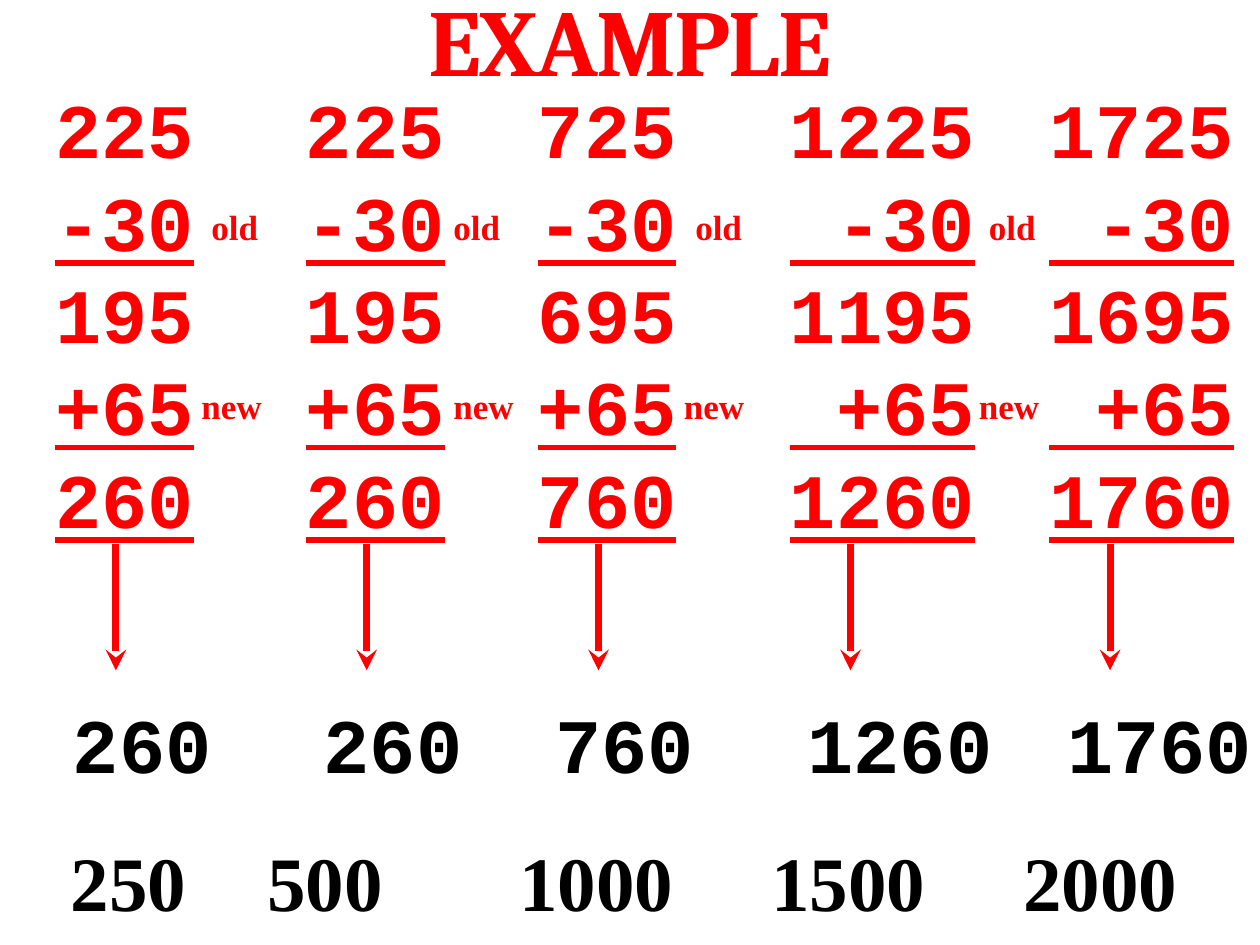
from lxml import etree
from pptx import Presentation, util as u
from pptx.dml.color import RGBColor
from pptx.enum import shapes, text
from pptx.oxml.ns import qn

# Content: old balance, old weight, new balance, new weight, result, limit
sums = [
    ("225", "-30", "195", "+65", "260", "250"),
    ("225", "-30", "195", "+65", "260", "500"),
    ("725", "-30", "695", "+65", "760", "1000"),
    ("1225", "-30", "1195", "+65", "1260", "1500"),
    ("1725", "-30", "1695", "+65", "1760", "2000"),
]
underlined_rows = (1, 3, 4)
sum_lefts = (0.34, 2.33, 4.17, 6.17, 8.23)
labels = [
    ("old", 1.58, (1.58, 3.5, 5.42, 7.75)),
    ("new", 3.0, (1.5, 3.5, 5.33, 7.67)),
]

THEME = {
    "red": RGBColor(255, 0, 0), "black": RGBColor(0, 0, 0), "white": RGBColor(255, 255, 255),
    "title": 54, "number": 44, "label": 20, "arrow": 4,
    "heading": "Cambria", "mono": "Courier New", "serif": "Times New Roman",
}
WIDTH, HEIGHT = 10, 7.5
SUM_TOP, ARROW_TOP, RESULT_TOP = 0.6, 4.32, 5.48
ARROW_SHIFT, ARROW_LENGTH, RESULT_SHIFT = 0.58, 1, 0.14


def write(frame, lines, size="number", color="red", font="mono", align=None, underlined=(), spacing=None):
    for row, line in enumerate(lines):
        paragraph = frame.paragraphs[0] if row == 0 else frame.add_paragraph()
        paragraph.alignment = align
        run = paragraph.add_run()
        run.text = line
        run.font.name, run.font.size = THEME[font], u.Pt(THEME[size])
        run.font.bold, run.font.color.rgb = True, THEME[color]
        if row in underlined:
            run.font.underline = True
        if spacing:
            run.font._element.set("spc", str(spacing))


def box(parent, left, top, width, height, wrap=False):
    frame = parent.add_textbox(*map(u.Inches, (left, top, width, height))).text_frame
    frame.word_wrap = wrap
    frame.auto_size = text.MSO_AUTO_SIZE.SHAPE_TO_FIT_TEXT
    return frame


def arrow_down(parent, x, top, length):
    arrow = parent.add_connector(shapes.MSO_CONNECTOR.STRAIGHT,
                                 *map(u.Inches, (x, top, x, top + length)))
    arrow.line.color.rgb, arrow.line.width = THEME["red"], u.Pt(THEME["arrow"])
    etree.SubElement(arrow.line._get_or_add_ln(), qn("a:tailEnd"), type="stealth")
    etree.SubElement(arrow._element.spPr, qn("a:effectLst"))


prs = Presentation()
prs.slide_width, prs.slide_height = u.Inches(WIDTH), u.Inches(HEIGHT)
slide = prs.slides.add_slide(prs.slide_layouts[6])

# Title
title = box(slide.shapes, 0.75, 0.06, 8.5, 0.75, wrap=True)
title.auto_size = text.MSO_AUTO_SIZE.NONE
title.vertical_anchor = text.MSO_ANCHOR.BOTTOM
write(title, ["EXAMPLE"], "title", font="heading", align=text.PP_ALIGN.CENTER, spacing=-100)

# Table of limits under the results
limits = slide.shapes.add_table(2, len(sums), *map(u.Inches, (0.02, 5.33, WIDTH, 2.22))).table
for row, height in zip(limits.rows, (1.17, 1.05)):
    row.height = u.Inches(height)
for cell in limits.iter_cells():
    cell.fill.solid()
    cell.fill.fore_color.rgb = THEME["white"]
for column, (*_, limit) in enumerate(sums):
    cell = limits.cell(1, column)
    cell.vertical_anchor = text.MSO_ANCHOR.MIDDLE
    write(cell.text_frame, [limit], color="black", font="serif",
          align=text.PP_ALIGN.LEFT if column else text.PP_ALIGN.CENTER)

# Sums, each with an arrow to its result
for left, (*steps, _) in zip(sum_lefts, sums):
    group = slide.shapes.add_group_shape().shapes
    digits = len(steps[0])
    width = 0.2 + 0.37 * digits
    write(box(group, left, SUM_TOP, width, 3.8),
          [step.rjust(digits) for step in steps], underlined=underlined_rows)
    arrow_down(group, left + ARROW_SHIFT, ARROW_TOP, ARROW_LENGTH)
    write(box(group, left + RESULT_SHIFT, RESULT_TOP, width, 0.83), steps[-1:], color="black")

# Labels beside the sums
for word, top, lefts in labels:
    for left in lefts:
        write(box(slide.shapes, left, top, 0.7, 0.44), [word], "label", font="serif")

prs.save("out.pptx")
